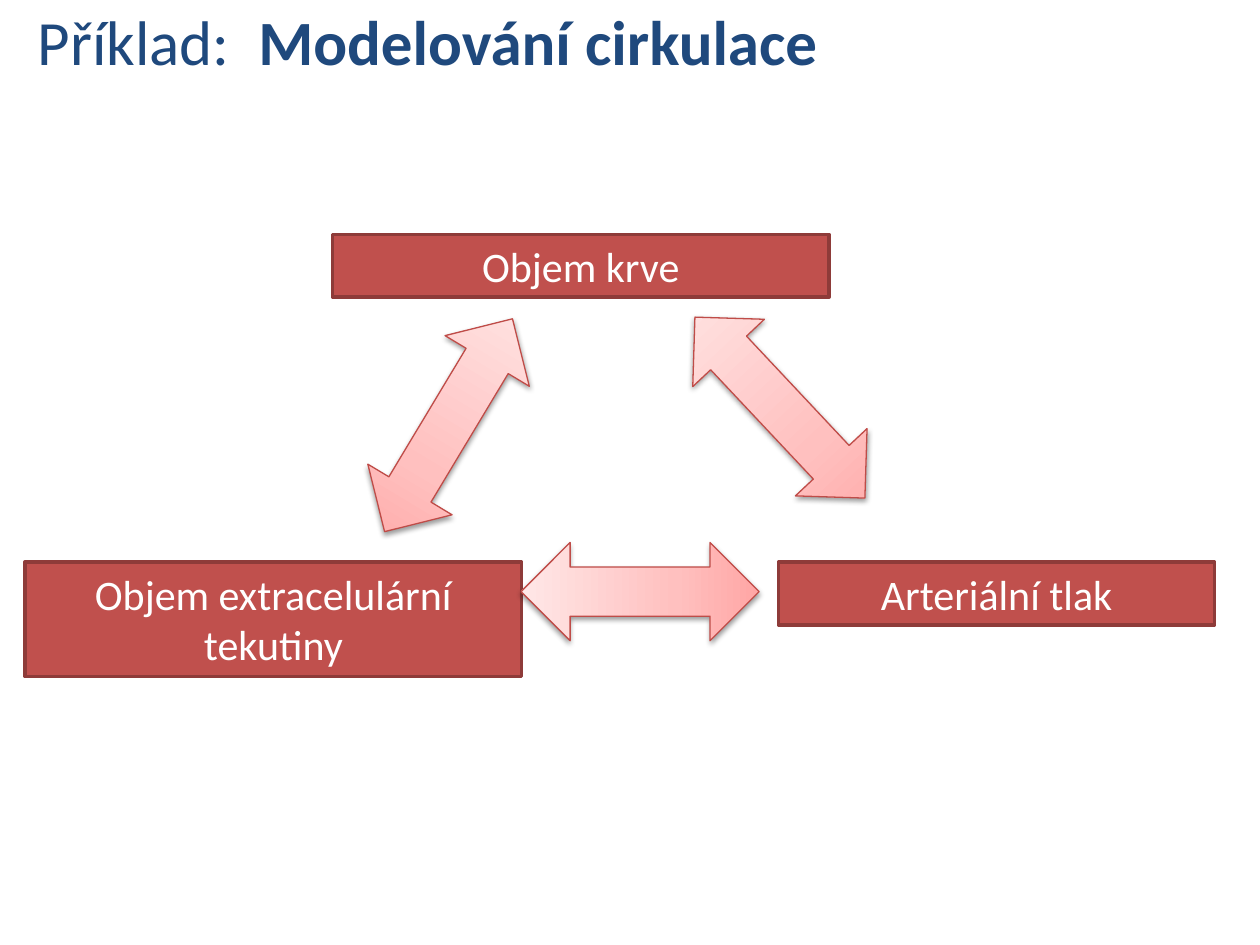
import copy
from dataclasses import dataclass

import lxml.etree
import pptx
import pptx.dml.color
import pptx.enum.shapes
import pptx.enum.text
import pptx.oxml
import pptx.oxml.ns
import pptx.slide
import pptx.util

Inches = pptx.util.Inches
Pt = pptx.util.Pt


def color(value: str) -> pptx.dml.color.RGBColor:
    return pptx.dml.color.RGBColor.from_string(value)


@dataclass(frozen=True)
class Theme:
    font: str = "Calibri"
    title_size: int = 36
    label_size: int = 24
    title: str = "1F497D"
    label: str = "FFFFFF"
    box_fill: str = "C0504D"
    box_line: str = "8E3B39"
    box_line_width: float = 2
    arrow_line: str = "BF4C48"
    arrow_line_width: float = 0.75
    arrow_stops: tuple = ((0, "FFA6A5"), (0.35, "FFC0BF"), (1, "FFE7E7"))
    shadow: str = "000000"


@dataclass(frozen=True)
class Box:
    text: str
    left: float
    top: float
    width: float
    height: float


@dataclass(frozen=True)
class Arrow:
    left: float
    top: float
    length: float
    rotation: float


THEME = Theme()
ARROW_WIDTH = 0.78

BOXES = (
    Box("Objem krve", 2.64, 1.86, 3.94, 0.5),
    Box("Objem extracelulární tekutiny", 0.2, 4.46, 3.94, 0.91),
    Box("Arteriální tlak", 6.18, 4.46, 3.46, 0.5),
)
ARROWS = (
    Arrow(3.17, 2.39, 1.97, 31),
    Arrow(5.8, 2.25, 1.97, 316.8),
    Arrow(4.69, 3.75, 1.89, 270),
)


def draw_box(slide: pptx.slide.Slide, box: Box) -> None:
    shape = slide.shapes.add_shape(
        pptx.enum.shapes.MSO_SHAPE.RECTANGLE,
        Inches(box.left), Inches(box.top), Inches(box.width), Inches(box.height),
    )
    shape.shadow.inherit = False
    shape.fill.solid()
    shape.fill.fore_color.rgb = color(THEME.box_fill)
    shape.line.color.rgb = color(THEME.box_line)
    shape.line.width = Pt(THEME.box_line_width)
    frame = shape.text_frame
    frame.word_wrap = True
    frame.auto_size = pptx.enum.text.MSO_AUTO_SIZE.SHAPE_TO_FIT_TEXT
    frame.vertical_anchor = pptx.enum.text.MSO_ANCHOR.TOP
    paragraph = frame.paragraphs[0]
    paragraph.text = box.text
    paragraph.alignment = pptx.enum.text.PP_ALIGN.CENTER
    paragraph.font.name = THEME.font
    paragraph.font.size = Pt(THEME.label_size)
    paragraph.font.color.rgb = color(THEME.label)


def draw_arrow(slide: pptx.slide.Slide, arrow: Arrow) -> None:
    shape = slide.shapes.add_shape(
        pptx.enum.shapes.MSO_SHAPE.UP_DOWN_ARROW,
        Inches(arrow.left), Inches(arrow.top), Inches(ARROW_WIDTH), Inches(arrow.length),
    )
    shape.rotation = arrow.rotation
    shape.line.color.rgb = color(THEME.arrow_line)
    shape.line.width = Pt(THEME.arrow_line_width)

    shape.fill.gradient()
    shape.fill.gradient_angle = 90
    properties = shape._element.spPr
    stop_list = properties.find(".//" + pptx.oxml.ns.qn("a:gsLst"))
    stop_list.append(copy.deepcopy(stop_list[0]))
    for stop, (position, value) in zip(shape.fill.gradient_stops, THEME.arrow_stops):
        stop.position = position
        stop.color.rgb = color(value)

    shape.shadow.inherit = False
    effects = properties.find(pptx.oxml.ns.qn("a:effectLst"))
    shadow = lxml.etree.SubElement(
        effects, pptx.oxml.ns.qn("a:outerShdw"),
        blurRad=str(Pt(3.1)), dist=str(Pt(1.6)), dir="5400000", rotWithShape="0",
    )
    shade = lxml.etree.SubElement(shadow, pptx.oxml.ns.qn("a:srgbClr"), val=THEME.shadow)
    lxml.etree.SubElement(shade, pptx.oxml.ns.qn("a:alpha"), val="38000")


def draw_title(slide: pptx.slide.Slide, lead: str, topic: str) -> None:
    text_box = slide.shapes.add_textbox(Inches(0.2), Inches(-0.03), Inches(8.05), Inches(0.71))
    text_box.text_frame.word_wrap = True
    paragraph = text_box.text_frame.paragraphs[0]
    paragraph.font.name = THEME.font
    paragraph.font.size = Pt(THEME.title_size)
    paragraph.font.color.rgb = color(THEME.title)
    paragraph.add_run().text = lead
    topic_run = paragraph.add_run()
    topic_run.text = topic
    topic_run.font.bold = True


def main() -> None:
    presentation = pptx.Presentation()
    presentation.slide_width = Inches(10)
    presentation.slide_height = Inches(7.5)
    slide = presentation.slides.add_slide(presentation.slide_layouts[6])
    for box in BOXES:
        draw_box(slide, box)
    for arrow in ARROWS:
        draw_arrow(slide, arrow)
    draw_title(slide, "Příklad:  ", "Modelování cirkulace")
    presentation.save("out.pptx")


if __name__ == "__main__":
    main()
